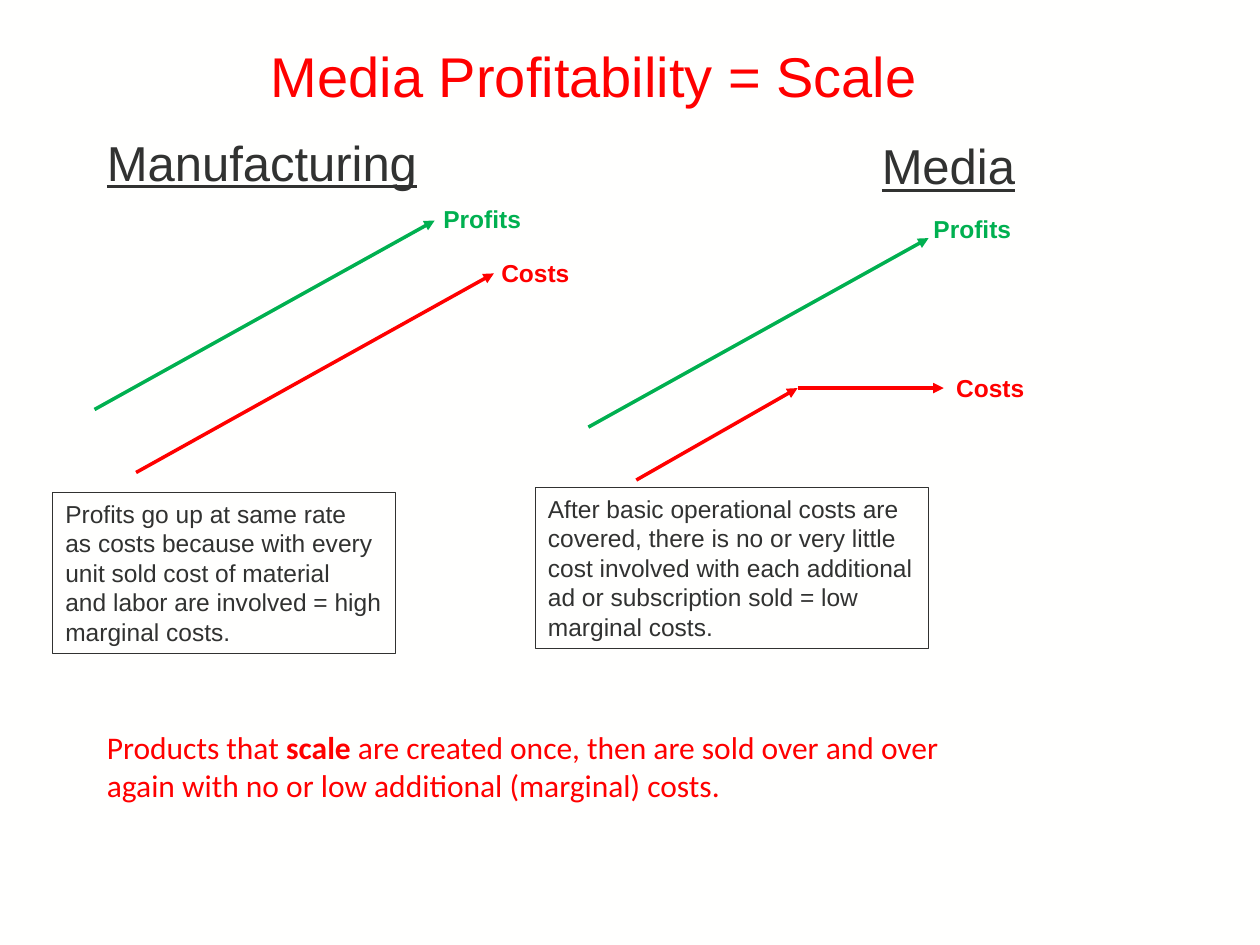
from dataclasses import dataclass

from lxml.etree import SubElement
from pptx import Presentation
from pptx.dml.color import RGBColor
from pptx.enum.shapes import MSO_CONNECTOR as CONN, MSO_SHAPE as SHAPE
from pptx.enum.text import MSO_ANCHOR as ANCHOR, MSO_AUTO_SIZE as FIT, PP_ALIGN as ALIGN
from pptx.oxml.ns import qn
from pptx.util import Inches, Pt


@dataclass(frozen=True)
class Theme:
    background: RGBColor = RGBColor(0xFF, 0xFF, 0xFE)
    ink: RGBColor = RGBColor(0x31, 0x32, 0x31)
    profit: RGBColor = RGBColor(0x00, 0xB0, 0x50)
    cost: RGBColor = RGBColor(0xFF, 0x00, 0x00)
    font: str = "Arial"
    summary_font: str = "Calibri"
    title: int = 32
    heading: int = 28
    summary: int = 18
    label: int = 14


THEME = Theme()


def write(sp, paragraphs, size, color, font=THEME.font, bold=False, underline=False, wrap=False):
    tf = sp.text_frame
    tf.text = "\n".join(paragraphs)
    tf.auto_size = FIT.NONE
    tf.word_wrap = wrap
    tf.vertical_anchor = ANCHOR.TOP
    for p in tf.paragraphs:
        p.alignment = ALIGN.LEFT
        for r in p.runs:
            style(r, size, color, font, bold, underline)
    return tf


def style(r, size, color, font, bold=False, underline=False):
    r.font.size = Pt(size)
    r.font.color.rgb = color
    r.font.name = font
    r.font.bold = bold
    r.font.underline = underline


def add_title(slide, text, left, top, width, height):
    sp = slide.shapes.title
    sp.left, sp.top, sp.width, sp.height = map(Inches, (left, top, width, height))
    write(sp, [text], THEME.title, THEME.cost)


def add_heading(slide, text, left, top, width):
    sp = slide.shapes.add_textbox(*map(Inches, (left, top, width, 0.57)))
    write(sp, [text], THEME.heading, THEME.ink, underline=True)


def add_label(slide, text, color, left, top, width):
    sp = slide.shapes.add_textbox(*map(Inches, (left, top, width, 0.34)))
    write(sp, [text], THEME.label, color, bold=True)


def add_arrow(slide, color, start, end):
    line = slide.shapes.add_connector(CONN.STRAIGHT, *map(Inches, (*start, *end)))
    line.line.color.rgb = color
    line.line.width = Pt(2)
    SubElement(line.line._get_or_add_ln(), qn("a:tailEnd"), type="triangle")
    SubElement(line._element.spPr, qn("a:effectLst"))


def add_note(slide, paragraphs, left, top, width, wrap=False):
    sp = slide.shapes.add_shape(SHAPE.RECTANGLE, *map(Inches, (left, top, width, 1.28)))
    sp.shadow.inherit = False
    sp.fill.background()
    sp.line.color.rgb = THEME.ink
    sp.line.width = Pt(0.5)
    write(sp, paragraphs, THEME.label, THEME.ink, wrap=wrap)


def add_summary(slide, lines, left, top, width, height):
    sp = slide.shapes.add_textbox(*map(Inches, (left, top, width, height)))
    tf = write(sp, [""] * len(lines), THEME.summary, THEME.cost)
    for p, parts in zip(tf.paragraphs, lines):
        for text, bold in parts:
            r = p.add_run()
            r.text = text
            style(r, THEME.summary, THEME.cost, THEME.summary_font, bold)


def add_manufacturing(slide):
    add_heading(slide, "Manufacturing", 0.75, 1, 2.7)
    add_arrow(slide, THEME.profit, (0.75, 3.25), (3.45, 1.75))
    add_arrow(slide, THEME.cost, (1.08, 3.75), (3.92, 2.17))
    add_label(slide, "Profits", THEME.profit, 3.42, 1.57, 0.82)
    add_label(slide, "Costs", THEME.cost, 3.88, 2, 0.75)
    add_note(slide, [
        "Profits go up at same rate",
        "as costs because with every",
        "unit sold cost of material",
        "and labor are involved = high",
        "marginal costs.",
    ], 0.42, 3.91, 2.72)


def add_media(slide):
    plateau = (6.33, 3.08)
    add_heading(slide, "Media", 6.9, 1.03, 1.27)
    add_arrow(slide, THEME.profit, (4.67, 3.39), (7.37, 1.89))
    add_arrow(slide, THEME.cost, (5.05, 3.81), plateau)
    add_arrow(slide, THEME.cost, plateau, (7.49, 3.08))
    add_label(slide, "Profits", THEME.profit, 7.31, 1.65, 0.82)
    add_label(slide, "Costs", THEME.cost, 7.49, 2.91, 0.75)
    add_note(slide, [
        "After basic operational costs are covered, there is no or very little cost "
        "involved with each additional ad or subscription sold = low marginal costs."
    ], 4.25, 3.87, 3.12, wrap=True)


def main():
    prs = Presentation()
    prs.slide_width, prs.slide_height = Inches(10), Inches(7.5)
    slide = prs.slides.add_slide(prs.slide_layouts[5])
    slide.background.fill.solid()
    slide.background.fill.fore_color.rgb = THEME.background

    add_title(slide, "Media Profitability = Scale", 2.05, 0.28, 5.37, 0.64)
    add_manufacturing(slide)
    add_media(slide)
    add_summary(slide, [
        [("Products that ", False), ("scale", True),
         (" are created once, then are sold over and over", False)],
        [("again with no or low additional (marginal) costs.", False)],
    ], 0.75, 5.73, 6.94, 0.71)
    prs.save("out.pptx")


if __name__ == "__main__":
    main()
